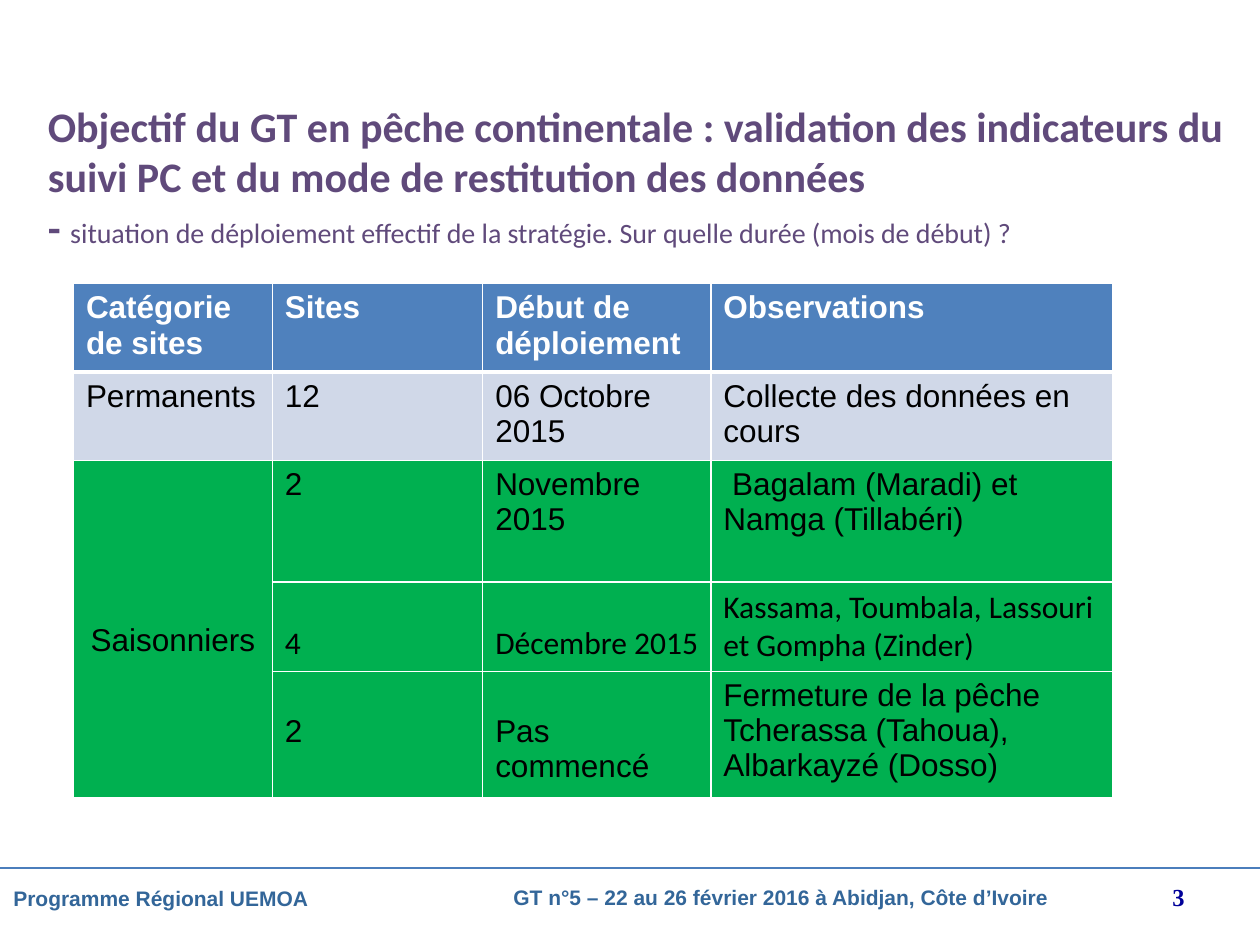
import dataclasses
import typing

import pptx
import pptx.dml.color
import pptx.enum.shapes
import pptx.enum.text
import pptx.oxml.ns
import pptx.util
from lxml import etree

Cm = pptx.util.Cm
Pt = pptx.util.Pt
ALIGN = pptx.enum.text.PP_ALIGN
ANCHOR = pptx.enum.text.MSO_ANCHOR

COLORS = {
    "title": "604A7B",
    "footer": "336699",
    "number": "000099",
    "rule": "4B7EBC",
    "header": "4F81BD",
    "permanent": "D0D8E8",
    "seasonal": "00B050",
    "white": "FFFFFF",
    "black": "000000",
}


@dataclasses.dataclass
class Label:
    text: str
    left: float
    top: float
    width: float
    font: str = "Arial"
    size: int = 12
    color: str = "footer"
    align: typing.Any = ALIGN.LEFT


@dataclasses.dataclass
class Cell:
    text: str
    font: str = "Arial"
    margin_top: float = 0.13
    align: typing.Any = ALIGN.LEFT
    anchor: typing.Any = ANCHOR.TOP


@dataclasses.dataclass
class Row:
    height: float
    fill: str
    cells: list
    header: bool = False


LABELS = [
    Label("3", 22.3, 17.65, 1.83, "Times New Roman", 14, "number", ALIGN.RIGHT),
    Label("GT n°5 – 22 au 26 février 2016 à Abidjan, Côte d’Ivoire", 10.1, 17.7, 13.2),
    Label("Programme Régional UEMOA", 0.02, 17.73, 10.4),
]

COLUMNS = [4.01, 4.24, 4.6, 8.1]
LOWERED = 0.85

ROWS = [
    Row(1.65, "header", [Cell("Catégorie de sites"), Cell("Sites"),
                         Cell("Début de déploiement"), Cell("Observations")], True),
    Row(1.68, "permanent", [Cell("Permanents"), Cell("12"), Cell("06 Octobre 2015"),
                            Cell("Collecte des données en cours")]),
    Row(2.45, "seasonal", [Cell("Saisonniers", margin_top=0.6, align=ALIGN.CENTER,
                                anchor=ANCHOR.MIDDLE),
                           Cell("2"), Cell("Novembre 2015"),
                           Cell(" Bagalam (Maradi) et Namga (Tillabéri)")]),
    Row(1.8, "seasonal", [None, Cell("4", "Calibri", LOWERED),
                          Cell("Décembre 2015", "Calibri", LOWERED),
                          Cell("Kassama, Toumbala, Lassouri et Gompha (Zinder)", "Calibri")]),
    Row(2.45, "seasonal", [None, Cell("2", margin_top=LOWERED),
                           Cell("Pas commencé", margin_top=LOWERED),
                           Cell("Fermeture de la pêche Tcherassa (Tahoua), Albarkayzé (Dosso)")]),
]


def rgb(name: str) -> pptx.dml.color.RGBColor:
    return pptx.dml.color.RGBColor.from_string(COLORS[name])


def add_run(p, text: str, font: str, size: int, color: str, bold: bool) -> None:
    r = p.add_run()
    r.text = text
    r.font.name = font
    r.font.size = Pt(size)
    r.font.bold = bold
    r.font.color.rgb = rgb(color)


def add_title(s) -> None:
    sp = s.shapes.title
    sp.left, sp.top, sp.width, sp.height = Cm(0.71), Cm(1.95), Cm(24.31), Cm(3.2)
    tf = sp.text_frame
    tf.word_wrap = True
    tf.auto_size = pptx.enum.text.MSO_AUTO_SIZE.NONE
    tf.vertical_anchor = ANCHOR.MIDDLE
    p = tf.paragraphs[0]
    p.alignment = ALIGN.LEFT
    add_run(p, "Objectif du GT en pêche continentale : validation des indicateurs du "
               "suivi PC et du mode de restitution des données", "Calibri", 24, "title", True)
    p.add_line_break()
    add_run(p, "- ", "Calibri", 24, "title", True)
    add_run(p, "situation de déploiement effectif de la stratégie. "
               "Sur quelle durée (mois de début) ?", "Calibri", 16, "title", False)


def add_footer_rule(s, width: int) -> None:
    line = s.shapes.add_connector(pptx.enum.shapes.MSO_CONNECTOR.STRAIGHT,
                                  0, Cm(17.5), width, Cm(17.5))
    line.line.color.rgb = rgb("rule")
    line.line.width = Pt(0.75)
    etree.SubElement(line._element.spPr, pptx.oxml.ns.qn("a:effectLst"))


def add_label(s, label: Label) -> None:
    sp = s.shapes.add_textbox(Cm(label.left), Cm(label.top), Cm(label.width), Cm(1.02))
    tf = sp.text_frame
    tf.word_wrap = True
    p = tf.paragraphs[0]
    p.alignment = label.align
    add_run(p, label.text, label.font, label.size, label.color, True)


def set_borders(cell, bottom: float) -> None:
    tc_pr = cell._tc.get_or_add_tcPr()
    for side, width in (("L", 1), ("R", 1), ("T", 1), ("B", bottom)):
        ln = etree.SubElement(tc_pr, pptx.oxml.ns.qn(f"a:ln{side}"), w=str(Pt(width)))
        fill = etree.SubElement(ln, pptx.oxml.ns.qn("a:solidFill"))
        etree.SubElement(fill, pptx.oxml.ns.qn("a:srgbClr"), val=COLORS["white"])


def fill_cell(cell, content: typing.Optional[Cell], row: Row) -> None:
    set_borders(cell, 3 if row.header else 1)
    cell.fill.solid()
    cell.fill.fore_color.rgb = rgb(row.fill)
    if content is None:
        return
    cell.margin_top = Cm(content.margin_top)
    cell.vertical_anchor = content.anchor
    p = cell.text_frame.paragraphs[0]
    p.alignment = content.align
    add_run(p, content.text, content.font, 18, "white" if row.header else "black", row.header)


def add_sites_table(s) -> None:
    height = sum(row.height for row in ROWS)
    table = s.shapes.add_table(len(ROWS), len(COLUMNS), Cm(1.48), Cm(5.72),
                               Cm(sum(COLUMNS)), Cm(height)).table
    for column, width in zip(table.columns, COLUMNS):
        column.width = Cm(width)
    for i, row in enumerate(ROWS):
        table.rows[i].height = Cm(row.height)
        for j, content in enumerate(row.cells):
            fill_cell(table.cell(i, j), content, row)
    table.cell(2, 0).merge(table.cell(4, 0))


def main() -> None:
    prs = pptx.Presentation()
    prs.slide_width, prs.slide_height = Cm(25.4), Cm(19.05)
    s = prs.slides.add_slide(prs.slide_layouts[5])
    add_footer_rule(s, prs.slide_width)
    add_title(s)
    for label in LABELS:
        add_label(s, label)
    add_sites_table(s)
    prs.save("out.pptx")


if __name__ == "__main__":
    main()
